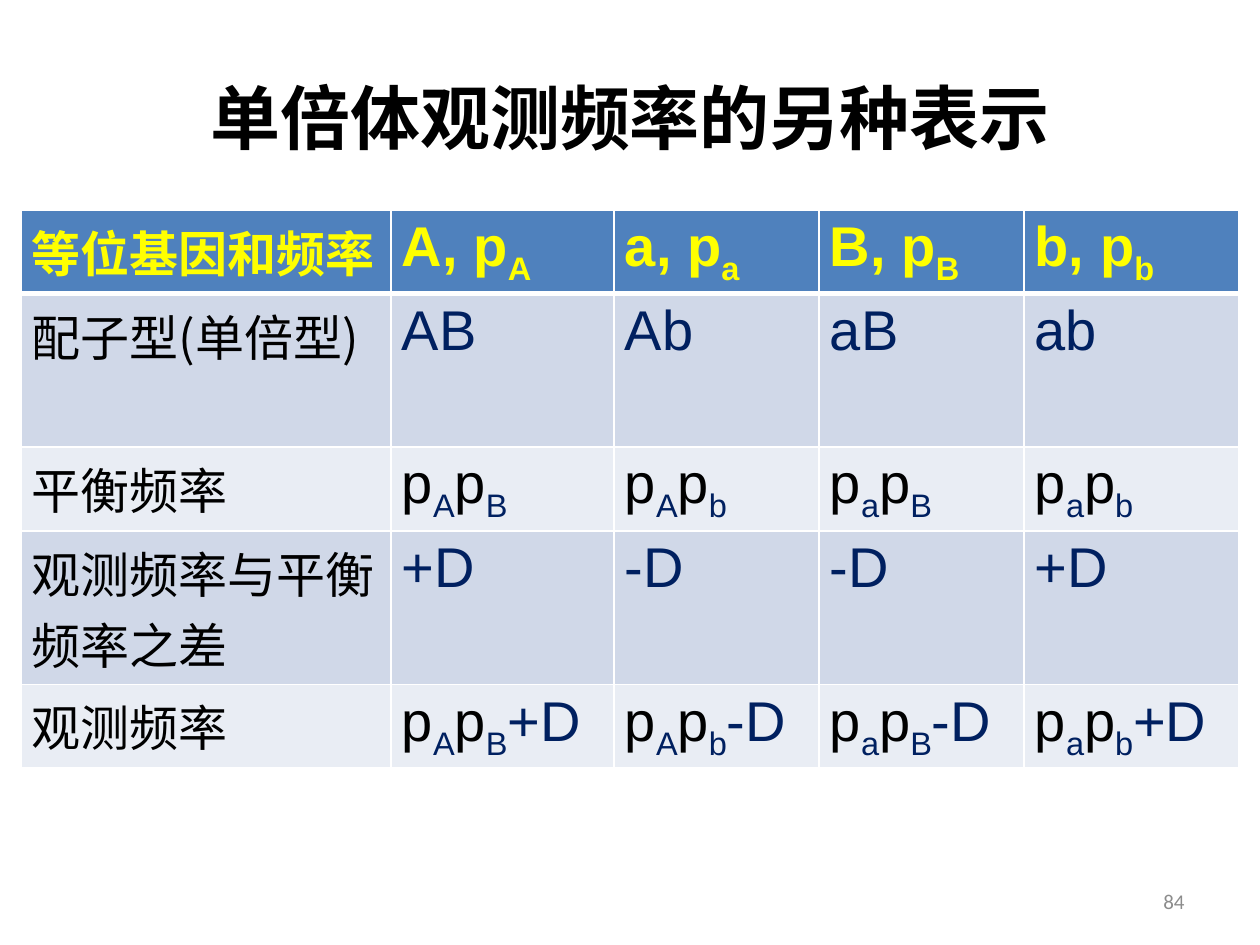
from lxml import etree
from pptx import Presentation
from pptx import util as u
from pptx.dml.color import RGBColor
from pptx.enum import text
from pptx.oxml import ns

PX = 914400 // 126
SANS = "Noto Sans CJK SC"
BLACK = RGBColor(0x00, 0x00, 0x00)
WHITE = RGBColor(0xFF, 0xFF, 0xFF)
GRAY = RGBColor(0x8C, 0x8C, 0x8C)
GOLD = RGBColor(0xFF, 0xFF, 0x00)
NAVY = RGBColor(0x00, 0x20, 0x60)
BLUE = RGBColor(0x4F, 0x81, 0xBD)
BANDS = [RGBColor(0xE9, 0xED, 0xF4), RGBColor(0xD0, 0xD8, 0xE8)]

COLS = [370, 223, 205, 205, 215]
ROWS = [72, 72, 72, 130, 71]
CELLS = [
    ["等位基因和频率", "A, p|_A", "a, p|_a", "B, p|_B", "b, p|_b"],
    ["配子型(单倍型)", "AB", "Ab", "aB", "ab"],
    ["平衡频率", "p|_A|p|_B", "p|_A|p|_b", "p|_a|p|_B", "p|_a|p|_b"],
    ["观测频率与平衡频率之差", "+D", "-D", "-D", "+D"],
    ["观测频率", "p|_A|p|_B|+D", "p|_A|p|_b|-D", "p|_a|p|_B|-D", "p|_a|p|_b|+D"],
]


def add_run(para, words, size, face, color, bold=False):
    run = para.add_run()
    run.text = words
    font = run.font
    font.size, font.name, font.bold = u.Pt(size), face, bold
    font.color.rgb = color
    east = etree.SubElement(font._element, ns.qn("a:ea"))
    east.set("typeface", SANS)
    return run


def add_edge(cell, side, width):
    line = etree.SubElement(cell._tc.get_or_add_tcPr(), ns.qn("a:ln" + side))
    line.set("w", str(u.Pt(width)))
    fill = etree.SubElement(line, ns.qn("a:solidFill"))
    etree.SubElement(fill, ns.qn("a:srgbClr")).set("val", str(WHITE))


deck = Presentation()
deck.slide_width, deck.slide_height = 1260 * PX, 945 * PX
slide = deck.slides.add_slide(deck.slide_layouts[5])

title = slide.shapes.title
title.left, title.top, title.width, title.height = 63 * PX, 48 * PX, 1134 * PX, 136 * PX
title.text_frame.vertical_anchor = text.MSO_ANCHOR.MIDDLE
para = title.text_frame.paragraphs[0]
para.alignment = text.PP_ALIGN.CENTER
add_run(para, "单倍体观测频率的另种表示", 40, "Arial", BLACK, True)

frame = slide.shapes.add_table(
    len(ROWS), len(COLS), 21 * PX, 210 * PX, sum(COLS) * PX, sum(ROWS) * PX)
table = frame.table
for col, width in zip(table.columns, COLS):
    col.width = width * PX
for row, height in zip(table.rows, ROWS):
    row.height = height * PX

for r, line in enumerate(CELLS):
    for c, words in enumerate(line):
        cell = table.cell(r, c)
        cell.margin_left = cell.margin_right = 11 * PX
        cell.margin_top = cell.margin_bottom = 6 * PX
        for side in "LRTB":
            thick = (r, side) in [(0, "B"), (1, "T")]
            add_edge(cell, side, 3 if thick else 1)
        cell.fill.solid()
        cell.fill.fore_color.rgb = BANDS[r % 2] if r else BLUE
        para = cell.text_frame.paragraphs[0]
        for part in words.split("|"):
            if r == 0:
                color = GOLD
            elif c == 0 or part == "p":
                color = BLACK
            else:
                color = NAVY
            size, face = (32, "Arial") if c else (28, SANS)
            run = add_run(para, part.lstrip("_"), size, face, color, r == 0)
            if part.startswith("_"):
                run.font._element.set("baseline", "-25000")

box = slide.shapes.add_textbox(903 * PX, 876 * PX, 294 * PX, 50 * PX)
box.text_frame.word_wrap = True
box.text_frame.vertical_anchor = text.MSO_ANCHOR.MIDDLE
para = box.text_frame.paragraphs[0]
para.alignment = text.PP_ALIGN.RIGHT
add_run(para, "84", 12, "Calibri", GRAY)

deck.save("out.pptx")
